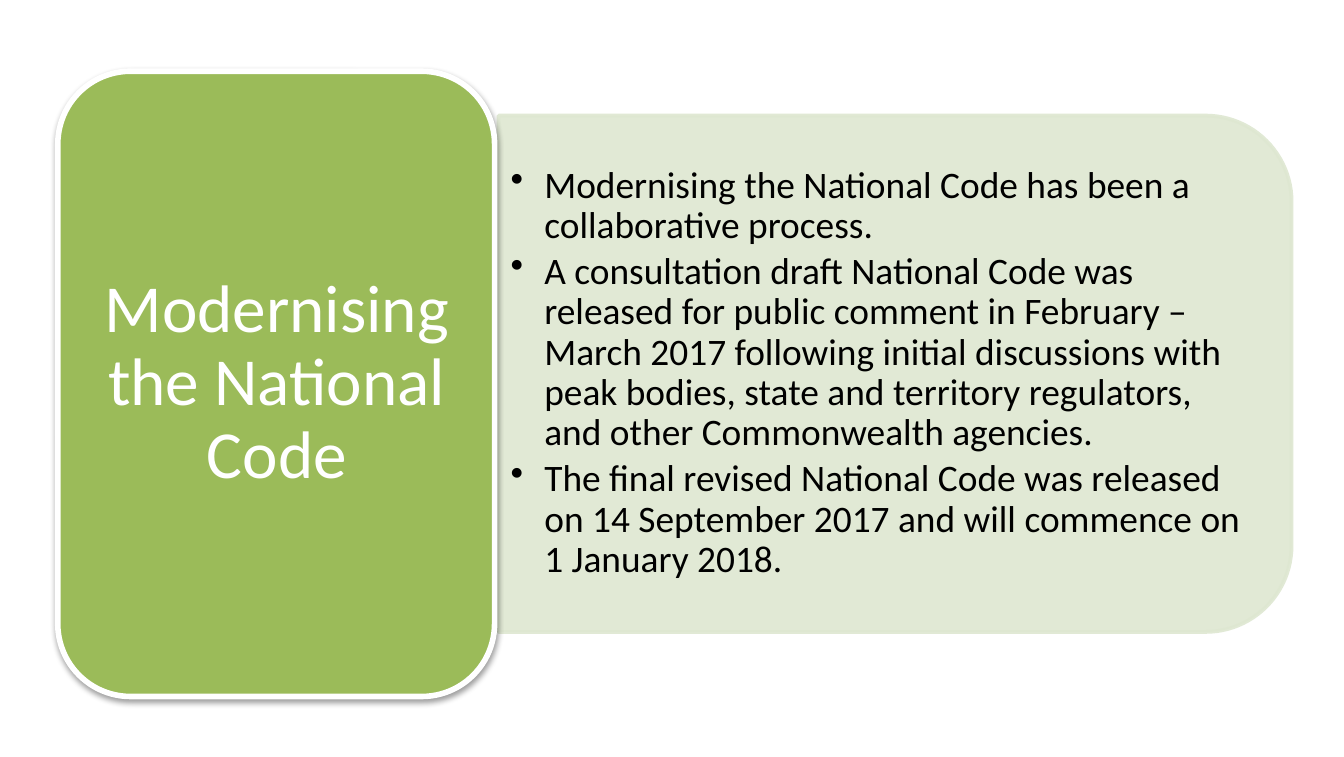
from dataclasses import dataclass

import pptx
import pptx.dml.color
import pptx.enum.shapes
import pptx.enum.text
import pptx.oxml
import pptx.oxml.ns
import pptx.util
from pptx.util import Inches

RGBColor = pptx.dml.color.RGBColor
ShapeType = pptx.enum.shapes.MSO_SHAPE
Align = pptx.enum.text.PP_ALIGN


@dataclass(frozen=True)
class Theme:
    font: str = "Calibri"
    title_size: float = 36
    body_size: float = 20
    accent: str = "9BBB59"
    panel: str = "DEE7D1"
    white: str = "FFFFFF"
    black: str = "000000"


THEME = Theme()

TITLE = "Modernising the National Code"
POINTS = [
    "Modernising the National Code has been a collaborative process.",
    "A consultation draft National Code was released for public comment in "
    "February – March 2017 following initial discussions with peak bodies, "
    "state and territory regulators, and other Commonwealth agencies.",
    "The final revised National Code was released on 14 September 2017 and "
    "will commence on 1 January 2018.",
]


def add_block(slide, kind, box, fill, line, line_width):
    shape = slide.shapes.add_shape(kind, *map(Inches, box))
    shape.shadow.inherit = False
    shape.fill.solid()
    shape.fill.fore_color.rgb = RGBColor.from_string(fill)
    shape.line.color.rgb = RGBColor.from_string(line)
    shape.line.width = pptx.util.Pt(line_width)
    return shape


def set_opacity(shape, percent):
    """Apply one opacity to both the fill and the outline."""
    for color in shape._element.spPr.iter(pptx.oxml.ns.qn("a:srgbClr")):
        alpha = color.makeelement(pptx.oxml.ns.qn("a:alpha"), {"val": str(percent * 1000)})
        color.append(alpha)


def add_drop_shadow(shape):
    effects = shape._element.spPr.find(pptx.oxml.ns.qn("a:effectLst"))
    effects.append(pptx.oxml.parse_xml(
        f'<a:outerShdw {pptx.oxml.ns.nsdecls("a")} blurRad="40000" dist="20000" '
        f'dir="5400000" rotWithShape="0"><a:srgbClr val="{THEME.black}">'
        '<a:alpha val="38000"/></a:srgbClr></a:outerShdw>'))


def add_bullet(paragraph):
    properties = paragraph._p.get_or_add_pPr()
    indent = Inches(0.25)
    properties.set("marL", str(indent))
    properties.set("indent", str(-indent))
    properties.append(pptx.oxml.parse_xml(
        f'<a:buChar {pptx.oxml.ns.nsdecls("a")} char="•"/>'))


def add_text(slide, box, texts, size, color, margins, space_after,
             alignment=Align.LEFT, bulleted=False):
    frame = slide.shapes.add_textbox(*map(Inches, box)).text_frame
    frame.word_wrap = True
    frame.vertical_anchor = pptx.enum.text.MSO_ANCHOR.MIDDLE
    horizontal, vertical = map(Inches, margins)
    frame.margin_left = frame.margin_right = horizontal
    frame.margin_top = frame.margin_bottom = vertical
    frame.text = "\n".join(texts)
    for paragraph in frame.paragraphs:
        paragraph.alignment = alignment
        paragraph.line_spacing = 0.9
        paragraph.space_after = pptx.util.Pt(space_after)
        if bulleted:
            add_bullet(paragraph)
        paragraph.font.name = THEME.font
        paragraph.font.size = pptx.util.Pt(size)
        paragraph.font.color.rgb = RGBColor.from_string(color)


def main():
    presentation = pptx.Presentation()
    presentation.slide_width = Inches(10)
    presentation.slide_height = Inches(5.63)
    slide = presentation.slides.add_slide(presentation.slide_layouts[6])

    panel = add_block(slide, ShapeType.ROUND_2_SAME_RECTANGLE,
                      (4.74, -0.17, 3.84, 5.9), THEME.panel, THEME.panel, 2)
    panel.rotation = 90
    set_opacity(panel, 90)
    add_text(slide, (3.72, 1.04, 5.71, 3.47), POINTS, THEME.body_size, THEME.black,
             margins=(0.08, 0.04), space_after=3, bulleted=True)

    title_block = add_block(slide, ShapeType.ROUNDED_RECTANGLE,
                            (0.43, 0.53, 3.25, 4.65), THEME.accent, THEME.white, 3)
    add_drop_shadow(title_block)
    add_text(slide, (0.59, 0.69, 2.94, 4.33), [TITLE], THEME.title_size, THEME.white,
             margins=(0.15, 0.07), space_after=12.6, alignment=Align.CENTER)

    presentation.save("out.pptx")


if __name__ == "__main__":
    main()
